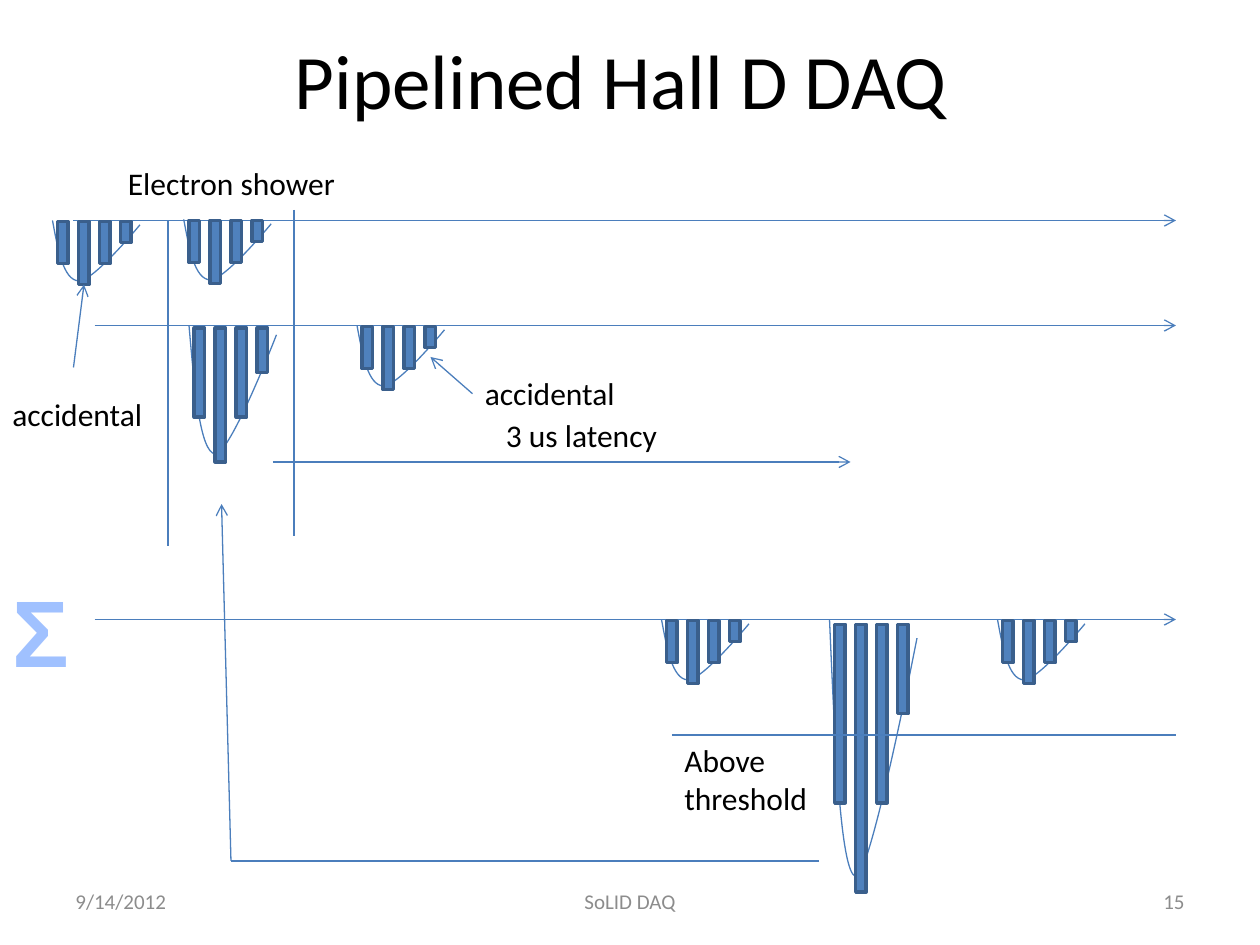
import dataclasses
from typing import Any

import lxml.etree
import pptx
import pptx.dml.color
import pptx.enum.shapes
import pptx.enum.text
import pptx.oxml.ns
import pptx.util

Align = pptx.enum.text.PP_ALIGN
Anchor = pptx.enum.text.MSO_ANCHOR
qn = pptx.oxml.ns.qn
GRID_CM = 2.54 / 12
LINE_COLOUR = "4B7EBC"
BAR_FILL = "4F81BD"
BAR_OUTLINE = "3A5F8C"
FOOTER_COLOUR = "8C8C8C"
BAR_HEIGHTS = (4, 6, 4, 2)
BAR_PITCH = 2
BAR_WIDTH = 1
BAR_LEFT = 0.5
BAR_TOP = 0.11
CURVE_POINTS = (
    (0.53, 2.86), (1.05, 5.68), (2.5, 5.76),
    (3.88, 5.82), (8.33, 0.42), (8.33, 0.42),
)


@dataclasses.dataclass
class Label:
    lines: tuple[str, ...]
    left: float
    top: float
    width: float
    height: float = 4.85
    size: float = 18
    colour: str = "000000"
    align: Any = Align.LEFT
    font: str = "Calibri"
    bold: bool = False
    wrap: bool = False
    anchor: Any = Anchor.TOP


@dataclasses.dataclass
class Line:
    start: tuple[float, float]
    end: tuple[float, float]
    arrow: bool = False


@dataclasses.dataclass
class Pulse:
    left: float
    top: float
    scale: float = 1


TIME_AXES = (
    Line((7, 21), (112, 21), True),
    Line((9, 31), (112, 31), True),
    Line((9, 59), (112, 59), True),
)
PULSES = (
    Pulse(17.5, 20.9),
    Pulse(5, 21),
    Pulse(34, 31),
    Pulse(18, 31, 17 / 8),
    Pulse(95, 59),
    Pulse(79, 59, 17 / 4),
    Pulse(63, 59),
)
MARKERS = (
    Line((26, 44), (81, 44), True),
    Line((64, 70), (112, 70)),
    Line((78, 82), (22, 82)),
    Line((22, 82), (21.1, 48), True),
    Line((16, 21), (16, 52)),
    Line((28, 20), (28, 51)),
    Line((45, 37.5), (41, 34), True),
    Line((7, 35), (8, 27.1), True),
)
LABELS = (
    Label(("Pipelined Hall D DAQ ",), 6, 0, 108, 15, 44,
          align=Align.CENTER, wrap=True, anchor=Anchor.MIDDLE),
    Label(("Σ",), 0, 54, 7.8, 12.1, 54, "A0C1FF", Align.CENTER, "Arial", True),
    Label(("3 us latency",), 47, 39, 17.05),
    Label(("Above", "threshold"), 64, 70, 14.25, 8.5),
    Label(("Electron shower",), 11, 15, 22.3),
    Label(("accidental",), 45, 35, 14.9),
    Label(("accidental",), 0, 37, 14.9),
) + tuple(
    Label((text,), left, 83.4, width, 4.8, 12, FOOTER_COLOUR, align,
          wrap=True, anchor=Anchor.MIDDLE)
    for text, left, width, align in (
        ("9/14/2012", 6, 28, Align.LEFT),
        ("15", 86, 28, Align.RIGHT),
        ("SoLID DAQ", 41, 38, Align.CENTER),
    )
)


def grid(*units: float) -> list[pptx.util.Cm]:
    return [pptx.util.Cm(unit * GRID_CM) for unit in units]


def rgb(colour: str) -> pptx.dml.color.RGBColor:
    return pptx.dml.color.RGBColor.from_string(colour)


def set_line(shape: Any, colour: str, width: float) -> None:
    shape.line.color.rgb = rgb(colour)
    shape.line.width = pptx.util.Pt(width)


def draw_line(shapes: Any, line: Line) -> None:
    connector = shapes.add_connector(
        pptx.enum.shapes.MSO_CONNECTOR.STRAIGHT, *grid(*line.start, *line.end)
    )
    set_line(connector, LINE_COLOUR, 0.75)
    if line.arrow:
        outline = connector.line._get_or_add_ln()
        lxml.etree.SubElement(outline, qn("a:tailEnd"), type="arrow")
    lxml.etree.SubElement(connector._element.spPr, qn("a:effectLst"))


def bend_segments(curve: Any) -> None:
    segments = list(curve._element.iter(qn("a:lnTo")))
    for first in range(0, len(segments), 3):
        bezier = lxml.etree.Element(qn("a:cubicBezTo"))
        segments[first].addprevious(bezier)
        for segment in segments[first:first + 3]:
            bezier.append(segment[0])
            segment.getparent().remove(segment)


def draw_pulse(shapes: Any, pulse: Pulse) -> None:
    group = shapes.add_group_shape()
    builder = group.shapes.build_freeform(*grid(pulse.left, pulse.top))
    builder.add_line_segments(
        [grid(pulse.left + x, pulse.top + y * pulse.scale) for x, y in CURVE_POINTS],
        close=False,
    )
    curve = builder.convert_to_shape()
    bend_segments(curve)
    curve.fill.background()
    curve.shadow.inherit = False
    set_line(curve, LINE_COLOUR, 0.75)
    for index, height in enumerate(BAR_HEIGHTS):
        bar = group.shapes.add_shape(
            pptx.enum.shapes.MSO_SHAPE.RECTANGLE,
            *grid(
                pulse.left + BAR_LEFT + index * BAR_PITCH,
                pulse.top + BAR_TOP * pulse.scale,
                BAR_WIDTH,
                height * pulse.scale,
            ),
        )
        bar.shadow.inherit = False
        bar.fill.solid()
        bar.fill.fore_color.rgb = rgb(BAR_FILL)
        set_line(bar, BAR_OUTLINE, 2)


def draw_label(shapes: Any, label: Label) -> None:
    box = shapes.add_textbox(*grid(label.left, label.top, label.width, label.height))
    frame = box.text_frame
    frame.word_wrap = label.wrap
    frame.vertical_anchor = label.anchor
    if not label.wrap:
        frame.auto_size = pptx.enum.text.MSO_AUTO_SIZE.SHAPE_TO_FIT_TEXT
    for index, text in enumerate(label.lines):
        paragraph = frame.add_paragraph() if index else frame.paragraphs[0]
        paragraph.alignment = label.align
        run = paragraph.add_run()
        run.text = text
        run.font.name = label.font
        run.font.size = pptx.util.Pt(label.size)
        run.font.bold = label.bold
        run.font.color.rgb = rgb(label.colour)


def main() -> None:
    presentation = pptx.Presentation()
    presentation.slide_width = pptx.util.Cm(25.4)
    presentation.slide_height = pptx.util.Cm(19.05)
    slide = presentation.slides.add_slide(presentation.slide_layouts[6])
    for line in TIME_AXES:
        draw_line(slide.shapes, line)
    for pulse in PULSES:
        draw_pulse(slide.shapes, pulse)
    for line in MARKERS:
        draw_line(slide.shapes, line)
    for label in LABELS:
        draw_label(slide.shapes, label)
    presentation.save("out.pptx")


if __name__ == "__main__":
    main()
